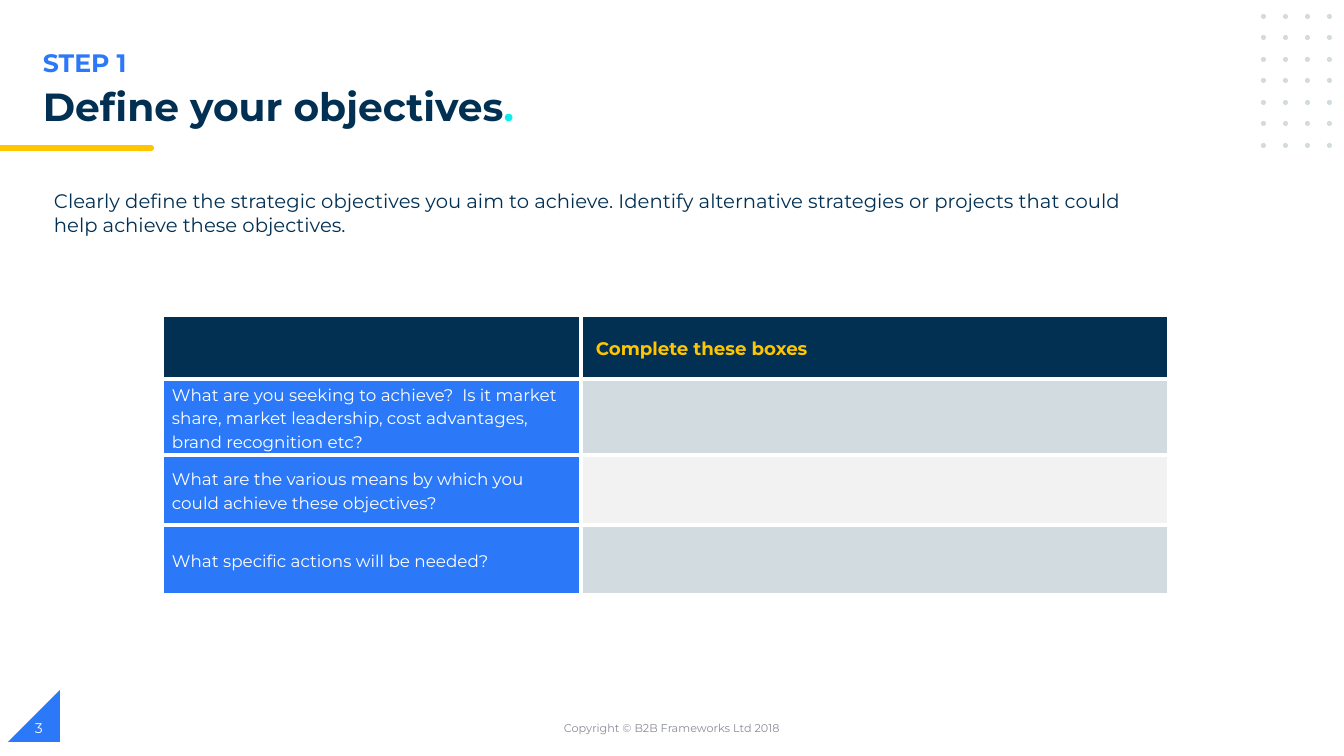
import lxml.etree
import pptx
import pptx.dml.color
import pptx.enum.shapes
import pptx.enum.text
import pptx.oxml.ns
import pptx.util

PX = 9144000 / 1008
THEME = {
    "font": "Montserrat",
    "colors": {
        "navy": "023053", "blue": "2B79F8", "yellow": "FFC600", "cyan": "0EECEC",
        "mist": "D1DBE0", "pale": "F2F2F2", "gray": "888C97", "white": "FFFFFF",
    },
    "sizes": {"title": 28, "step": 18, "intro": 14, "header": 13, "cell": 12, "page": 10, "footer": 8},
    "border": 3,
}
COLORS = {
    name: pptx.dml.color.RGBColor.from_string(value)
    for name, value in THEME["colors"].items()
}
SHAPES = pptx.enum.shapes.MSO_SHAPE
ALIGN = pptx.enum.text.PP_ALIGN
ANCHOR = pptx.enum.text.MSO_ANCHOR


def px(*lengths):
    """Turn pixel lengths into a list of EMU lengths."""
    return [pptx.util.Emu(round(length * PX)) for length in lengths]


def write(text_frame, runs, size, bold=False, **paragraph_format):
    """Fill the first paragraph with (text, color name) runs."""
    text_frame.word_wrap = True
    paragraph = text_frame.paragraphs[0]
    for name, value in paragraph_format.items():
        setattr(paragraph, name, value)
    for text, color in runs:
        run = paragraph.add_run()
        run.text = text
        font_format = {
            "name": THEME["font"],
            "size": pptx.util.Pt(THEME["sizes"][size]),
            "bold": bold,
        }
        for name, value in font_format.items():
            setattr(run.font, name, value)
        run.font.color.rgb = COLORS[color]


presentation = pptx.Presentation()
presentation.slide_width, presentation.slide_height = px(1344, 756)
slide = presentation.slides.add_slide(presentation.slide_layouts[6])

# Corner triangle, title underline and dot grid
decorations = [
    (SHAPES.RIGHT_TRIANGLE, (8, 690, 52, 52), "blue"),
    (SHAPES.FLOWCHART_TERMINATOR, (135, 145, 19, 6), "yellow"),
    (SHAPES.RECTANGLE, (0, 145, 142, 6), "yellow"),
]
decorations += [
    (SHAPES.OVAL, (1261 + 22 * column, 14 + 43 * row // 2, 5, 5), "mist")
    for row in range(7)
    for column in range(4)
]
for kind, box, color in decorations:
    shape = slide.shapes.add_shape(kind, *px(*box))
    shape.shadow.inherit = False
    shape.fill.solid()
    shape.fill.fore_color.rgb = COLORS[color]
    shape.line.fill.background()
    if kind == SHAPES.RIGHT_TRIANGLE:
        shape.element.spPr.xfrm.set("flipH", "1")

# Headings, introduction and footer
texts = [
    ((33, 42, 674, 40), [("STEP 1", "blue")], "step", ANCHOR.TOP, {"bold": True}),
    ((33, 83, 782, 40), [("Define your objectives", "navy"), (".", "cyan")], "title",
     ANCHOR.TOP, {"bold": True, "line_spacing": 0.9}),
    ((44, 184, 1133, 57),
     [("Clearly define the strategic objectives you aim to achieve. Identify alternative "
       "strategies or projects that could help achieve these objectives.", "navy")],
     "intro", ANCHOR.TOP, {}),
    ((445, 708, 454, 40), [("Copyright © B2B Frameworks Ltd 2018", "gray")], "footer",
     ANCHOR.MIDDLE, {"alignment": ALIGN.CENTER}),
    ((25, 708, 302, 40), [("3", "white")], "page", ANCHOR.MIDDLE, {}),
]
for box, runs, size, anchor, text_format in texts:
    text_box = slide.shapes.add_textbox(*px(*box))
    text_box.text_frame.vertical_anchor = anchor
    write(text_box.text_frame, runs, size, **text_format)

# Objectives table
column_widths = [419, 588]
row_heights = [64, 76, 70, 70]
rows = [
    ("", "Complete these boxes", "navy", "navy"),
    ("What are you seeking to achieve?  Is it market share, market leadership, "
     "cost advantages, brand recognition etc?", "", "blue", "mist"),
    ("What are the various means by which you could achieve these objectives?",
     "", "blue", "pale"),
    ("What specific actions will be needed?", "", "blue", "mist"),
]
table = slide.shapes.add_table(
    len(rows), len(column_widths),
    *px(162, 315, sum(column_widths), sum(row_heights)),
).table
table.horz_banding = False
for column, width in zip(table.columns, px(*column_widths)):
    column.width = width
for row, height in zip(table.rows, px(*row_heights)):
    row.height = height

for row_index, (question, answer, question_fill, answer_fill) in enumerate(rows):
    is_header = row_index == 0
    for column_index, (text, fill) in enumerate([(question, question_fill), (answer, answer_fill)]):
        cell = table.cell(row_index, column_index)
        left, right, none = px(15 if is_header else 10, 10, 0)
        cell_format = {
            "margin_left": left, "margin_right": right,
            "margin_top": none, "margin_bottom": none,
            "vertical_anchor": ANCHOR.MIDDLE,
        }
        for name, value in cell_format.items():
            setattr(cell, name, value)
        cell.fill.solid()
        cell.fill.fore_color.rgb = COLORS[fill]
        if text:
            write(cell.text_frame, [(text, "yellow" if is_header else "white")],
                  "header" if is_header else "cell", bold=is_header, line_spacing=1.15)
        properties = cell._tc.get_or_add_tcPr()
        for position, side in enumerate(["a:lnL", "a:lnR", "a:lnT", "a:lnB"]):
            border = lxml.etree.Element(
                pptx.oxml.ns.qn(side), w=str(pptx.util.Pt(THEME["border"])))
            border_fill = lxml.etree.SubElement(border, pptx.oxml.ns.qn("a:solidFill"))
            lxml.etree.SubElement(
                border_fill, pptx.oxml.ns.qn("a:srgbClr"), val=THEME["colors"]["white"])
            properties.insert(position, border)

presentation.save("out.pptx")
